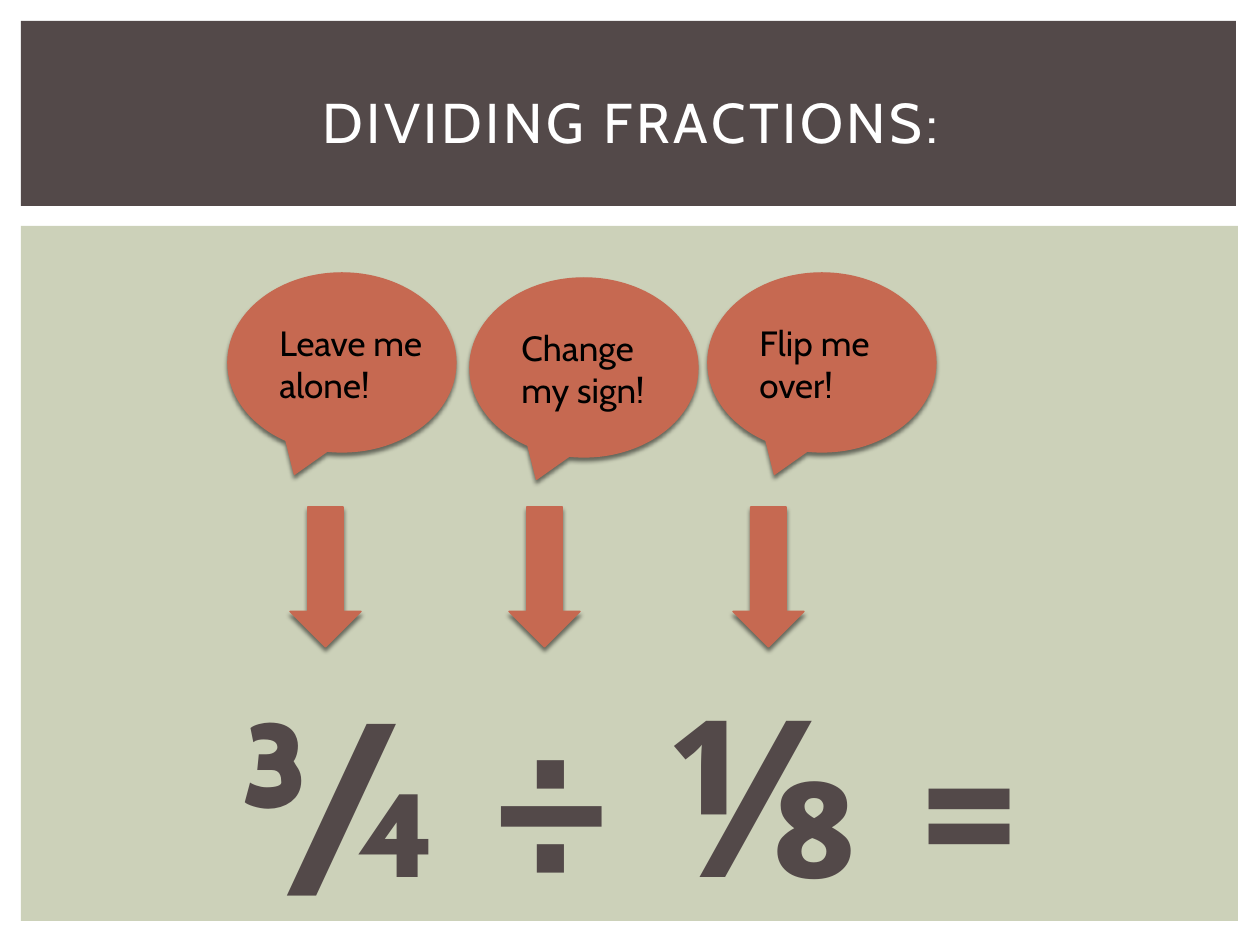
from dataclasses import dataclass
from lxml.etree import SubElement
from pptx import Presentation
from pptx.dml.color import RGBColor
from pptx.enum.shapes import MSO_SHAPE
from pptx.enum.text import MSO_ANCHOR, PP_ALIGN
from pptx.oxml.ns import qn
from pptx.util import Pt

EMU_PER_PX = 914400 / 126


@dataclass(frozen=True)
class Theme:
    font: str = "Cabin"
    dark: str = "534949"
    panel: str = "CCD1B9"
    accent: str = "C66951"
    white: str = "FFFFFF"
    black: str = "000000"
    title: int = 32
    speech: int = 20
    equation: int = 125


THEME = Theme()


def px(n):
    return round(n * EMU_PER_PX)


def box(*lengths):
    return [px(n) for n in lengths]


def add_panel(s, bounds, color):
    sp = s.shapes.add_shape(MSO_SHAPE.RECTANGLE, *box(*bounds))
    sp.shadow.inherit = False
    sp.fill.solid()
    sp.fill.fore_color.rgb = RGBColor.from_string(color)
    sp.line.fill.background()


def add_shadow(sp):
    sp.shadow.inherit = False
    effects = sp._element.spPr.find(qn("a:effectLst"))
    shadow = SubElement(effects, qn("a:outerShdw"), blurRad=str(Pt(2.5)),
                        dist=str(Pt(2)), dir="5400000", rotWithShape="0")
    color = SubElement(shadow, qn("a:srgbClr"), val=THEME.black)
    SubElement(color, qn("a:alpha"), val="50000")


def add_accent(s, kind, bounds):
    sp = s.shapes.add_shape(kind, *box(*bounds))
    sp.fill.solid()
    sp.fill.fore_color.rgb = RGBColor.from_string(THEME.accent)
    sp.line.color.rgb = RGBColor.from_string(THEME.accent)
    sp.line.width = Pt(0.79)
    add_shadow(sp)


def add_text(s, bounds, text, size, color, align=PP_ALIGN.LEFT,
             anchor=MSO_ANCHOR.TOP, bold=False, spacing=0):
    tf = s.shapes.add_textbox(*box(*bounds)).text_frame
    tf.word_wrap = True
    tf.vertical_anchor = anchor
    p = tf.paragraphs[0]
    p.alignment = align
    r = p.add_run()
    r.text = text
    r.font.name = THEME.font
    r.font.size = Pt(size)
    r.font.bold = bold
    r.font.color.rgb = RGBColor.from_string(color)
    if spacing:
        r._r.get_or_add_rPr().set("spc", str(round(spacing * 100)))


def add_speech(s, left, top, text):
    add_accent(s, MSO_SHAPE.OVAL_CALLOUT, (left, top, 228, 179))
    add_text(s, (left + 39, top + 42, 178, 97), text, THEME.speech, THEME.black)


def main():
    prs = Presentation()
    prs.slide_width, prs.slide_height = box(1260, 945)
    s = prs.slides.add_slide(prs.slide_layouts[6])
    add_panel(s, (21, 226, 1217, 695), THEME.panel)
    add_panel(s, (21, 21, 1215, 185), THEME.dark)
    add_text(s, (53, 49, 1155, 145), "DIVIDING FRACTIONS:", THEME.title,
             THEME.white, PP_ALIGN.CENTER, MSO_ANCHOR.MIDDLE, spacing=2)
    add_text(s, (53, 657, 1158, 266), "¾ ÷ ⅛ =", THEME.equation, THEME.dark,
             PP_ALIGN.CENTER, MSO_ANCHOR.MIDDLE, bold=True, spacing=1.5)
    steps = [
        (290, 228, 273, "Leave me alone!"),
        (509, 470, 278, "Change my sign!"),
        (733, 708, 273, "Flip me over!"),
    ]
    for arrow_left, left, top, text in steps:
        add_accent(s, MSO_SHAPE.DOWN_ARROW, (arrow_left, 507, 71, 140))
        add_speech(s, left, top, text)
    prs.save("out.pptx")


if __name__ == "__main__":
    main()
